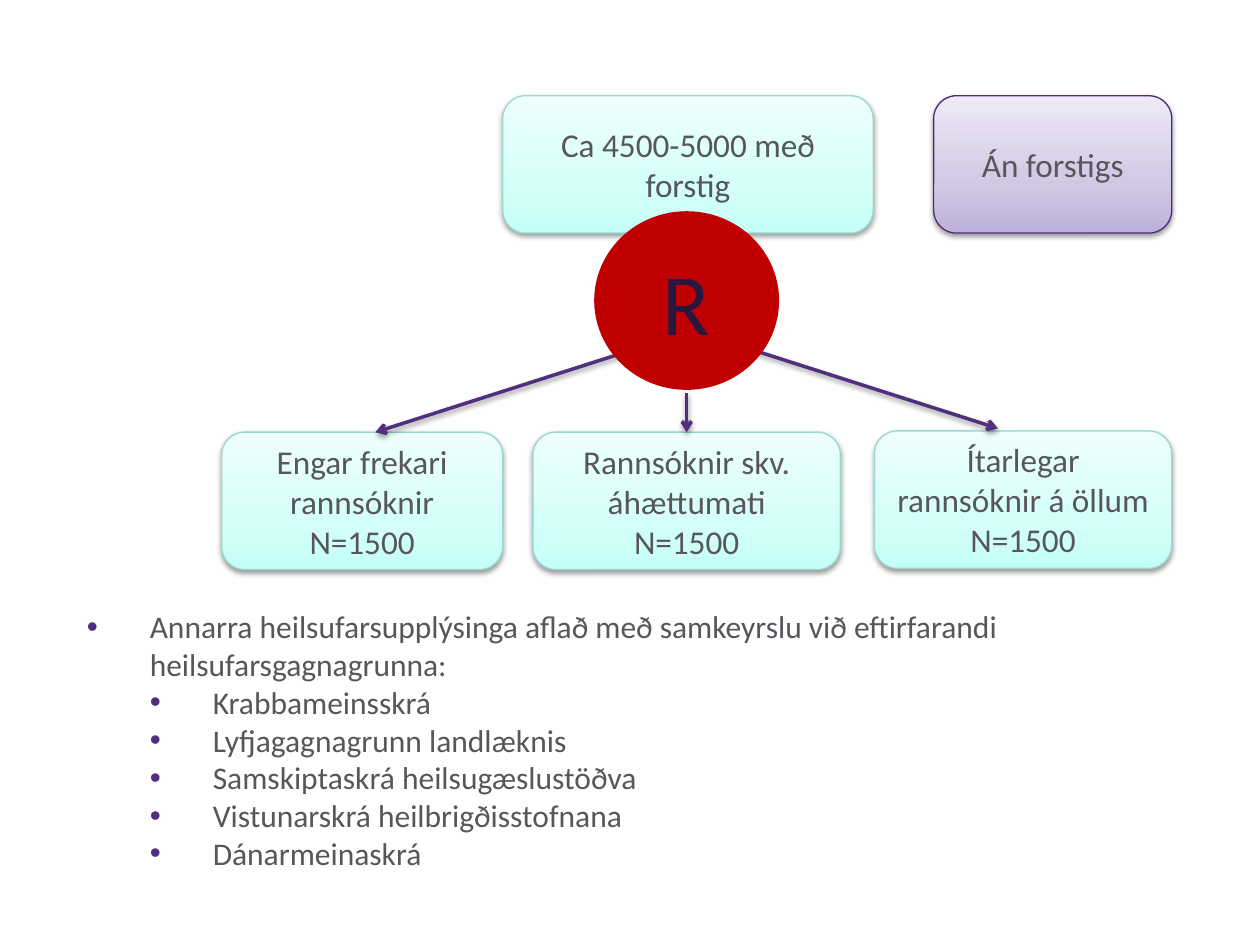
from copy import deepcopy
from dataclasses import dataclass

from lxml import etree
from pptx import Presentation
from pptx.dml.color import RGBColor
from pptx.enum.shapes import MSO_CONNECTOR, MSO_SHAPE
from pptx.enum.text import MSO_ANCHOR, MSO_AUTO_SIZE, PP_ALIGN
from pptx.oxml.ns import qn
from pptx.util import Inches, Pt

ROUNDED = MSO_SHAPE.ROUNDED_RECTANGLE
OVAL = MSO_SHAPE.OVAL
STRAIGHT = MSO_CONNECTOR.STRAIGHT
MIDDLE = MSO_ANCHOR.MIDDLE
GROW = MSO_AUTO_SIZE.SHAPE_TO_FIT_TEXT
CENTER, LEFT = PP_ALIGN.CENTER, PP_ALIGN.LEFT
TOP_SIDE = 0


@dataclass(frozen=True)
class Theme:
    """Colours, type sizes and line widths of the slide."""
    font: str = "Calibri"
    text: str = "56565B"
    accent: str = "512E7E"
    red: str = "C00000"
    letter: str = "29173F"
    mint: tuple = ("C4FFF7", "D5FFF9", "EEFFFD")
    mint_edge: str = "99D7CF"
    lilac: tuple = ("BDB0DA", "D1C8E4", "EDEAF5")
    lilac_edge: str = "4F2B7D"
    stops: tuple = (0, 0.35, 1)
    list_size: float = 18
    box_size: float = 19
    letter_size: float = 50
    thin: float = 0.75
    thick: float = 2


THEME = Theme()
BOX_HEIGHT = 1.09
GROUP_TOP = 0.76
ARM_TOP = 3.43


def rgb(code):
    """Return a colour from its hex code."""
    return RGBColor.from_string(code)


def set_line(line, color, width):
    """Colour a line and set its width in points."""
    line.color.rgb = rgb(color)
    line.width = Pt(width)


def add_bullet(paragraph, level):
    """Give a paragraph a hanging bullet at its level."""
    paragraph.level = level
    properties = paragraph._p.get_or_add_pPr()
    properties.set("marL", str(Inches(0.5 * (level + 1))))
    properties.set("indent", str(Inches(-0.5)))
    bullet_color = etree.SubElement(properties, qn("a:buClr"))
    etree.SubElement(bullet_color, qn("a:srgbClr"), val=THEME.accent)
    etree.SubElement(properties, qn("a:buFont"), typeface="Arial")
    etree.SubElement(properties, qn("a:buChar"), char="•")


def write(frame, lines, size, color=THEME.text, align=CENTER, levels=None):
    """Fill a text frame with one paragraph for each line."""
    frame.word_wrap = True
    for index, line in enumerate(lines):
        paragraph = frame.add_paragraph() if index else frame.paragraphs[0]
        paragraph.alignment = align
        if levels:
            add_bullet(paragraph, levels[index])
        run = paragraph.add_run()
        run.text = line
        run.font.name = THEME.font
        run.font.size = Pt(size)
        run.font.color.rgb = rgb(color)


def add_shadow(effects):
    """Put a soft shadow below into an effect list."""
    shadow = etree.SubElement(
        effects, qn("a:outerShdw"), blurRad=str(Pt(3.1)), dist=str(Pt(1.6)),
        dir="5400000", rotWithShape="0")
    color = etree.SubElement(shadow, qn("a:srgbClr"), val="000000")
    etree.SubElement(color, qn("a:alpha"), val="38000")


def fill_gradient(shape, colors):
    """Fill a shape with three colours running from bottom to top."""
    shape.fill.gradient()
    shape.fill.gradient_angle = 90
    stop_list = shape._element.spPr.find(".//" + qn("a:gsLst"))
    stop_list.insert(1, deepcopy(stop_list[0]))
    for stop, color, position in zip(shape.fill.gradient_stops, colors, THEME.stops):
        stop.color.rgb = rgb(color)
        stop.position = position


def add_box(slide, lines, left, top, width, colors=THEME.mint, edge=THEME.mint_edge):
    """Add a rounded study group box with gradient and shadow."""
    box = slide.shapes.add_shape(
        ROUNDED, Inches(left), Inches(top), Inches(width), Inches(BOX_HEIGHT))
    fill_gradient(box, colors)
    set_line(box.line, edge, THEME.thin)
    box.shadow.inherit = False
    add_shadow(box._element.spPr.find(qn("a:effectLst")))
    box.text_frame.vertical_anchor = MIDDLE
    write(box.text_frame, lines, THEME.box_size)
    return box


def add_arrow(slide, start, end, target=None):
    """Add an arrow, joined to the top of a target box if given."""
    arrow = slide.shapes.add_connector(STRAIGHT, *map(Inches, start + end))
    if target is not None:
        arrow.end_connect(target, TOP_SIDE)
    set_line(arrow.line, THEME.accent, THEME.thick)
    etree.SubElement(arrow.line._get_or_add_ln(), qn("a:tailEnd"), type="arrow")
    add_shadow(etree.SubElement(arrow._element.spPr, qn("a:effectLst")))


def add_randomisation(slide):
    """Add the red circle that marks randomisation."""
    circle = slide.shapes.add_shape(
        OVAL, Inches(4.73), Inches(1.69), Inches(1.44), Inches(1.39))
    circle.fill.solid()
    circle.fill.fore_color.rgb = rgb(THEME.red)
    set_line(circle.line, THEME.red, THEME.thick)
    circle.shadow.inherit = False
    circle.text_frame.vertical_anchor = MIDDLE
    write(circle.text_frame, ["R"], THEME.letter_size, color=THEME.letter)


def add_registries(slide):
    """Add the bulleted list of health registries."""
    registries = [
        "Krabbameinsskrá",
        "Lyfjagagnagrunn landlæknis",
        "Samskiptaskrá heilsugæslustöðva",
        "Vistunarskrá heilbrigðisstofnana",
        "Dánarmeinaskrá",
    ]
    intro = ("Annarra heilsufarsupplýsinga aflað með samkeyrslu við eftirfarandi "
             "heilsufarsgagnagrunna:")
    frame = slide.shapes.add_textbox(
        Inches(0.59), Inches(4.77), Inches(8.11), Inches(2.22)).text_frame
    frame.auto_size = GROW
    write(frame, [intro] + registries, THEME.list_size, align=LEFT,
          levels=[0] + [1] * len(registries))


def main():
    """Build the study design slide and save it."""
    presentation = Presentation()
    presentation.slide_width, presentation.slide_height = Inches(10), Inches(7.5)
    slide = presentation.slides.add_slide(presentation.slide_layouts[6])

    add_registries(slide)
    add_box(slide, ["Án forstigs"], 7.41, GROUP_TOP, 1.89,
            colors=THEME.lilac, edge=THEME.lilac_edge)
    add_box(slide, ["Ca 4500-5000 með forstig"], 3.99, GROUP_TOP, 2.94)

    arms = [
        ("Engar frekari rannsóknir", 1.76, ARM_TOP, 2.23),
        ("Rannsóknir skv. áhættumati", 4.23, ARM_TOP, 2.44),
        ("Ítarlegar rannsóknir á öllum", 6.94, 3.42, 2.36),
    ]
    arm_boxes = [add_box(slide, [label, "N=1500"], left, top, width)
                 for label, left, top, width in arms]

    add_arrow(slide, (5.95, 2.77), (7.92, 3.4))
    add_arrow(slide, (4.98, 2.79), (2.98, ARM_TOP))
    add_arrow(slide, (5.45, 3.12), (5.45, ARM_TOP), target=arm_boxes[1])
    add_randomisation(slide)
    presentation.save("out.pptx")


if __name__ == "__main__":
    main()
